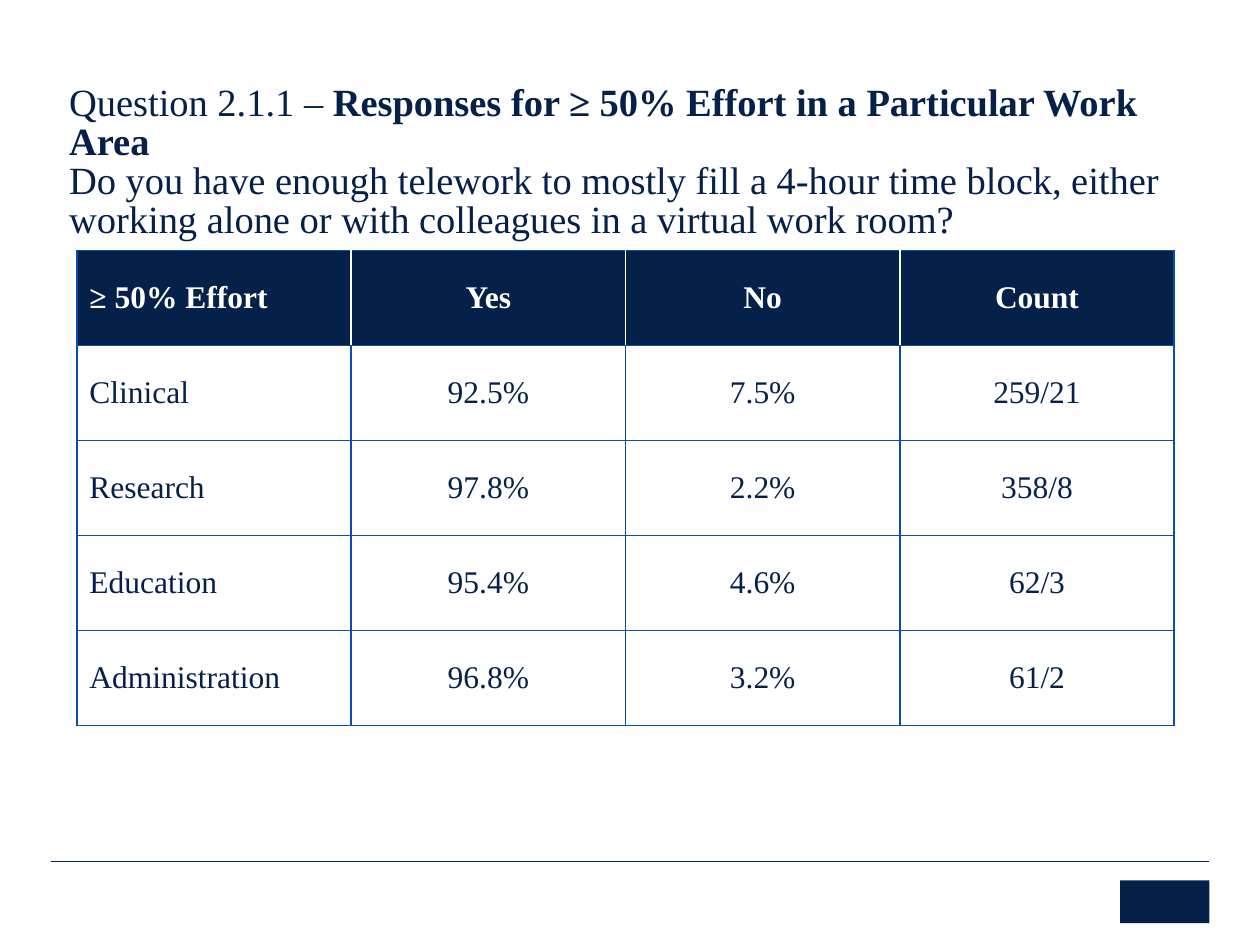
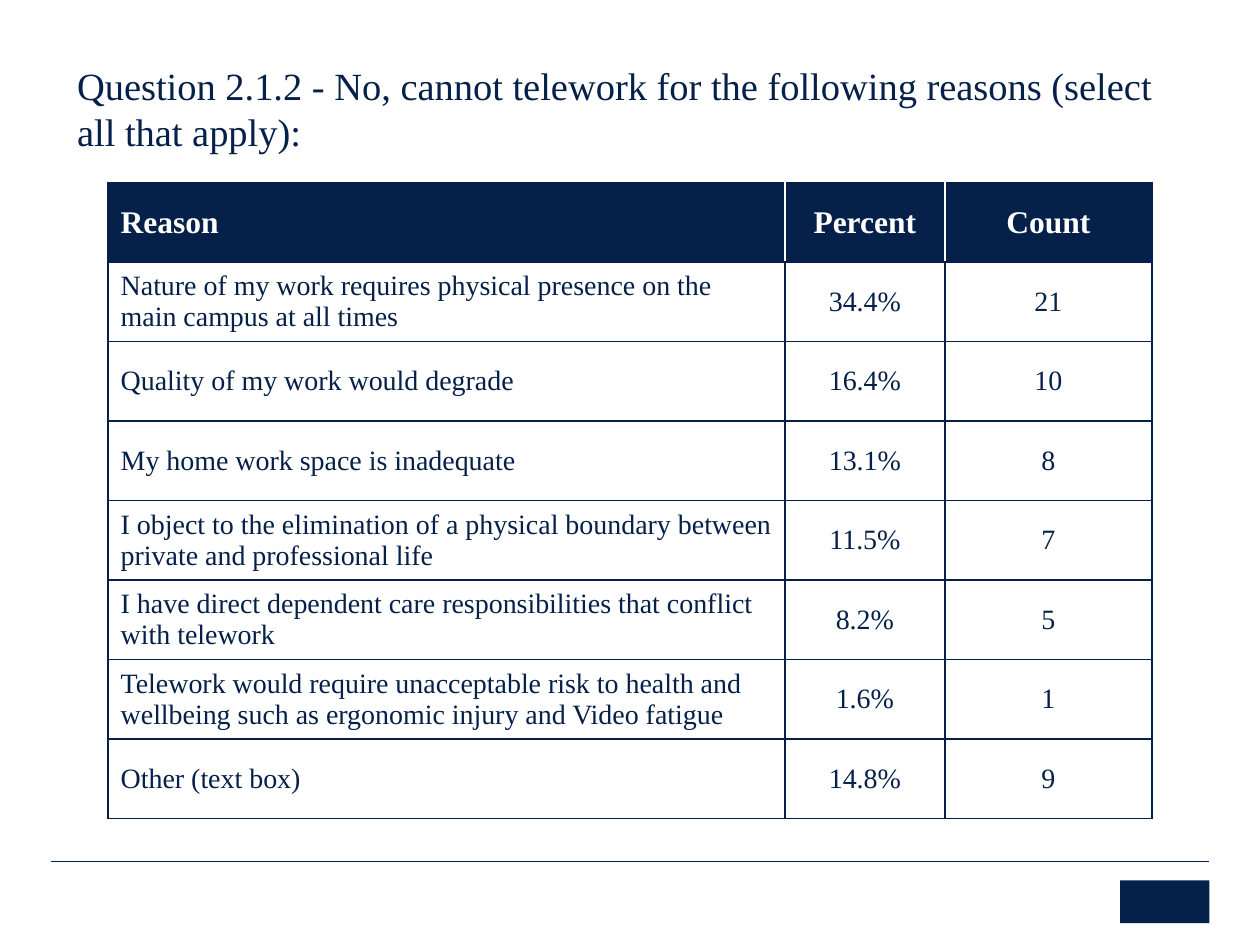
from dataclasses import dataclass

from lxml.etree import SubElement
from pptx import Presentation
from pptx.dml.color import RGBColor
from pptx.enum.shapes import MSO_CONNECTOR as Connector, MSO_SHAPE as Shape
from pptx.enum.text import MSO_ANCHOR as Anchor, MSO_AUTO_SIZE as AutoSize, PP_ALIGN as Align
from pptx.oxml.ns import qn
from pptx.util import Cm, Pt


@dataclass(frozen=True)
class Theme:
    font: str = "Times New Roman"
    navy: str = "052049"
    blue: str = "0C4CAE"
    white: str = "FFFFFF"
    title_size: int = 22
    header_size: int = 18
    body_size: int = 18
    small_body_size: int = 16
    border_width: float = 1
    rule_width: float = 0.25


class Deck:
    """Holds the theme and the slide being built."""

    def __init__(self, theme):
        self.theme = theme
        self.presentation = Presentation()
        self.presentation.slide_width = Cm(25.4)
        self.presentation.slide_height = Cm(19.05)
        self.slide = None

    def add_slide(self):
        layout = self.presentation.slide_layouts.get_by_name("Title Only")
        self.slide = self.presentation.slides.add_slide(layout)
        self.add_footer()

    def add_footer(self):
        navy = RGBColor.from_string(self.theme.navy)
        # Rule across the foot of the slide
        rule = self.slide.shapes.add_connector(
            Connector.STRAIGHT, Cm(1.02), Cm(17.37), Cm(24.38), Cm(17.37))
        rule.line.color.rgb = navy
        rule.line.width = Pt(self.theme.rule_width)
        SubElement(rule._element.spPr, qn("a:effectLst"))
        # Plain block in the logo's place
        block = self.slide.shapes.add_shape(
            Shape.RECTANGLE, Cm(22.58), Cm(17.75), Cm(1.8), Cm(0.86))
        block.shadow.inherit = False
        block.fill.solid()
        block.fill.fore_color.rgb = navy
        block.line.fill.background()

    def add_run(self, paragraph, text, size, color, bold=False):
        run = paragraph.add_run()
        run.text = text
        run.font.name = self.theme.font
        run.font.size = Pt(size)
        run.font.bold = bold
        run.font.color.rgb = RGBColor.from_string(color)

    def add_title(self, box, lines, anchor=Anchor.TOP, line_spacing=1.0):
        """Each line is a list of (text, bold) runs."""
        title = self.slide.shapes.title
        title.left, title.top, title.width, title.height = map(Cm, box)
        frame = title.text_frame
        frame.word_wrap = True
        frame.auto_size = AutoSize.NONE
        frame.vertical_anchor = anchor
        paragraph = frame.paragraphs[0]
        paragraph.alignment = Align.LEFT
        paragraph.line_spacing = line_spacing
        for index, line in enumerate(lines):
            if index:
                paragraph.add_line_break()
            for text, bold in line:
                self.add_run(paragraph, text, self.theme.title_size, self.theme.navy, bold)

    def set_borders(self, cell, colors):
        """Colours run left, right, top, bottom."""
        properties = cell._tc.get_or_add_tcPr()
        for side, color in zip("LRTB", colors):
            line = SubElement(properties, qn(f"a:ln{side}"),
                              w=str(Pt(self.theme.border_width)))
            fill = SubElement(line, qn("a:solidFill"))
            SubElement(fill, qn("a:srgbClr"), val=color)

    def add_table(self, left, top, height, column_widths, rows, border, body_size):
        theme = self.theme
        last = len(column_widths) - 1
        table = self.slide.shapes.add_table(
            len(rows), len(column_widths), Cm(left), Cm(top),
            Cm(sum(column_widths)), Cm(height)).table
        for column, width in zip(table.columns, column_widths):
            column.width = Cm(width)
        for row_index, row in enumerate(rows):
            header = row_index == 0
            table.rows[row_index].height = Cm(height / len(rows))
            inner = theme.white if header else border
            for column_index, text in enumerate(row):
                cell = table.cell(row_index, column_index)
                self.set_borders(cell, (inner if column_index else border,
                                        inner if column_index < last else border,
                                        border, border))
                cell.fill.solid()
                cell.fill.fore_color.rgb = RGBColor.from_string(
                    theme.navy if header else theme.white)
                cell.vertical_anchor = Anchor.MIDDLE
                paragraph = cell.text_frame.paragraphs[0]
                paragraph.alignment = Align.CENTER if column_index else Align.LEFT
                self.add_run(paragraph, text,
                             theme.header_size if header else body_size,
                             theme.white if header else theme.navy, header)


EFFORT_ROWS = [
    ("≥ 50% Effort", "Yes", "No", "Count"),
    ("Clinical", "92.5%", "7.5%", "259/21"),
    ("Research", "97.8%", "2.2%", "358/8"),
    ("Education", "95.4%", "4.6%", "62/3"),
    ("Administration", "96.8%", "3.2%", "61/2"),
]

REASON_ROWS = [
    ("Reason", "Percent", "Count"),
    ("Nature of my work requires physical presence on the main campus at all times",
     "34.4%", "21"),
    ("Quality of my work would degrade", "16.4%", "10"),
    ("My home work space is inadequate", "13.1%", "8"),
    ("I object to the elimination of a physical boundary between private and "
     "professional life", "11.5%", "7"),
    ("I have direct dependent care responsibilities that conflict with telework",
     "8.2%", "5"),
    ("Telework would require unacceptable risk to health and wellbeing such as "
     "ergonomic injury and Video fatigue", "1.6%", "1"),
    ("Other (text box)", "14.8%", "9"),
]


def main():
    theme = Theme()
    deck = Deck(theme)

    # Slide 1: telework by work area
    deck.add_slide()
    deck.add_title(
        (1.14, 1.52, 23.29, 3.48),
        [[("Question 2.1.1 – ", False),
          ("Responses for ≥ 50% Effort in a Particular Work Area", True)],
         [("Do you have enough telework to mostly fill a 4-hour time block, either "
           "working alone or with colleagues in a virtual work room?", False)]],
        anchor=Anchor.BOTTOM, line_spacing=0.85)
    deck.add_table(1.55, 5.05, 9.58, [5.53] * 4, EFFORT_ROWS,
                   theme.blue, theme.body_size)

    # Slide 2: reasons against telework
    deck.add_slide()
    deck.add_title(
        (1.3, 1.12, 22.35, 2.13),
        [[("Question 2.1.2 - No, cannot telework for the following reasons "
           "(select all that apply):", False)]])
    deck.add_table(2.18, 3.68, 12.83, [13.64, 3.23, 4.17], REASON_ROWS,
                   theme.navy, theme.small_body_size)

    deck.presentation.save("out.pptx")


if __name__ == "__main__":
    main()
